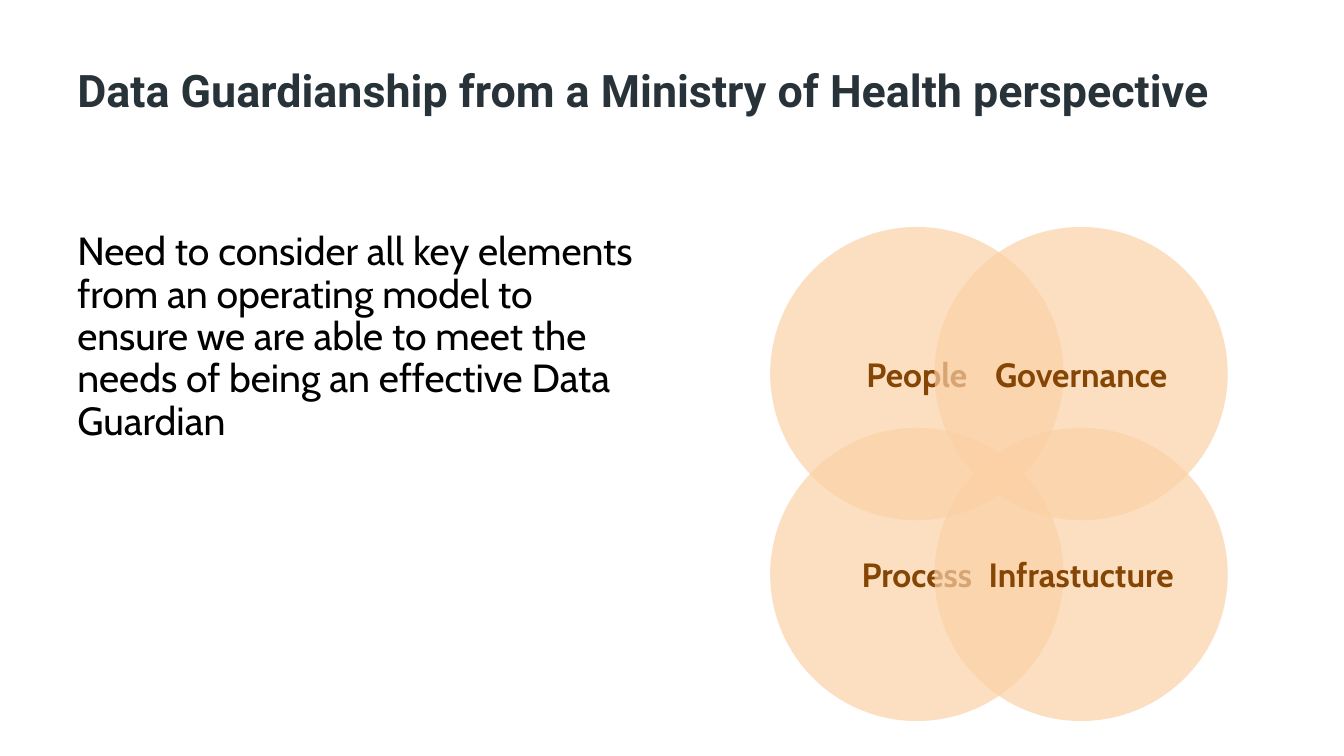
"""Build the slide on data guardianship with its four overlapping elements."""
from dataclasses import dataclass

from lxml import etree
from pptx import Presentation
from pptx.dml.color import RGBColor
from pptx.enum.shapes import MSO_SHAPE
from pptx.enum.text import MSO_ANCHOR, PP_ALIGN
from pptx.oxml.ns import qn
from pptx.util import Cm, Pt

OVAL = MSO_SHAPE.OVAL
TOP, MIDDLE = MSO_ANCHOR.TOP, MSO_ANCHOR.MIDDLE
LEFT, CENTER = PP_ALIGN.LEFT, PP_ALIGN.CENTER

CIRCLE_COLOR = "FBD1A5"
CIRCLE_OPACITY = 69
DIAMETER = 7.39
DIAGRAM_LEFT, DIAGRAM_TOP = 19.41, 5.72
COLUMN_STEP, ROW_STEP = 4.14, 5.06
CIRCLE_INSET = Cm(0.1)


@dataclass(frozen=True)
class TextStyle:
    font: str
    size: int
    color: str
    bold: bool
    align: PP_ALIGN
    anchor: MSO_ANCHOR
    line_spacing: float


@dataclass(frozen=True)
class Passage:
    text: str
    left: float
    top: float
    width: float
    height: float
    style: TextStyle


@dataclass(frozen=True)
class Element:
    label: str
    column: int
    row: int


HEADING = TextStyle("Roboto", 32, "283239", True, LEFT, MIDDLE, 0.9)
BODY = TextStyle("Cabin", 28, "000000", False, LEFT, TOP, 0.9)
LABEL = TextStyle("Cabin", 24, "854605", True, CENTER, MIDDLE, 1.0)

PASSAGES = [
    Passage("Data Guardianship from a Ministry of Health perspective",
            1.7, 0.76, 30.48, 3.18, HEADING),
    Passage("Need to consider all key elements from an operating model to "
            "ensure we are able to meet the needs of being an effective Data Guardian",
            1.7, 5.72, 14.78, 9.53, BODY),
]
ELEMENTS = [
    Element("People", 0, 0),
    Element("Governance", 1, 0),
    Element("Process", 0, 1),
    Element("Infrastucture", 1, 1),
]


def rgb(value: str) -> RGBColor:
    return RGBColor.from_string(value)


def write(frame, text: str, style: TextStyle) -> None:
    frame.word_wrap = True
    frame.vertical_anchor = style.anchor
    paragraph = frame.paragraphs[0]
    paragraph.alignment = style.align
    paragraph.line_spacing = style.line_spacing
    run = paragraph.add_run()
    run.text = text
    formats = {"name": style.font, "size": Pt(style.size), "bold": style.bold}
    for attribute, value in formats.items():
        setattr(run.font, attribute, value)
    run.font.color.rgb = rgb(style.color)


def draw_passage(slide, passage: Passage) -> None:
    box = slide.shapes.add_textbox(Cm(passage.left), Cm(passage.top),
                                   Cm(passage.width), Cm(passage.height))
    write(box.text_frame, passage.text, passage.style)


def draw_element(diagram, element: Element) -> None:
    circle = diagram.shapes.add_shape(
        OVAL,
        Cm(DIAGRAM_LEFT + element.column * COLUMN_STEP),
        Cm(DIAGRAM_TOP + element.row * ROW_STEP),
        Cm(DIAMETER), Cm(DIAMETER))
    circle.shadow.inherit = False
    circle.fill.solid()
    circle.fill.fore_color.rgb = rgb(CIRCLE_COLOR)
    circle.line.fill.background()
    fill_color = circle.fill._xPr.find(qn("a:solidFill")).find(qn("a:srgbClr"))
    etree.SubElement(fill_color, qn("a:alpha")).set("val", str(CIRCLE_OPACITY * 1000))
    for side in ("left", "right", "top", "bottom"):
        setattr(circle.text_frame, f"margin_{side}", CIRCLE_INSET)
    write(circle.text_frame, element.label, LABEL)


def main() -> None:
    presentation = Presentation()
    presentation.slide_width, presentation.slide_height = Cm(33.87), Cm(19.05)
    blank_layout = presentation.slide_layouts[6]
    slide = presentation.slides.add_slide(blank_layout)
    for passage in PASSAGES:
        draw_passage(slide, passage)
    diagram = slide.shapes.add_group_shape()
    for element in ELEMENTS:
        draw_element(diagram, element)
    presentation.save("out.pptx")


if __name__ == "__main__":
    main()
